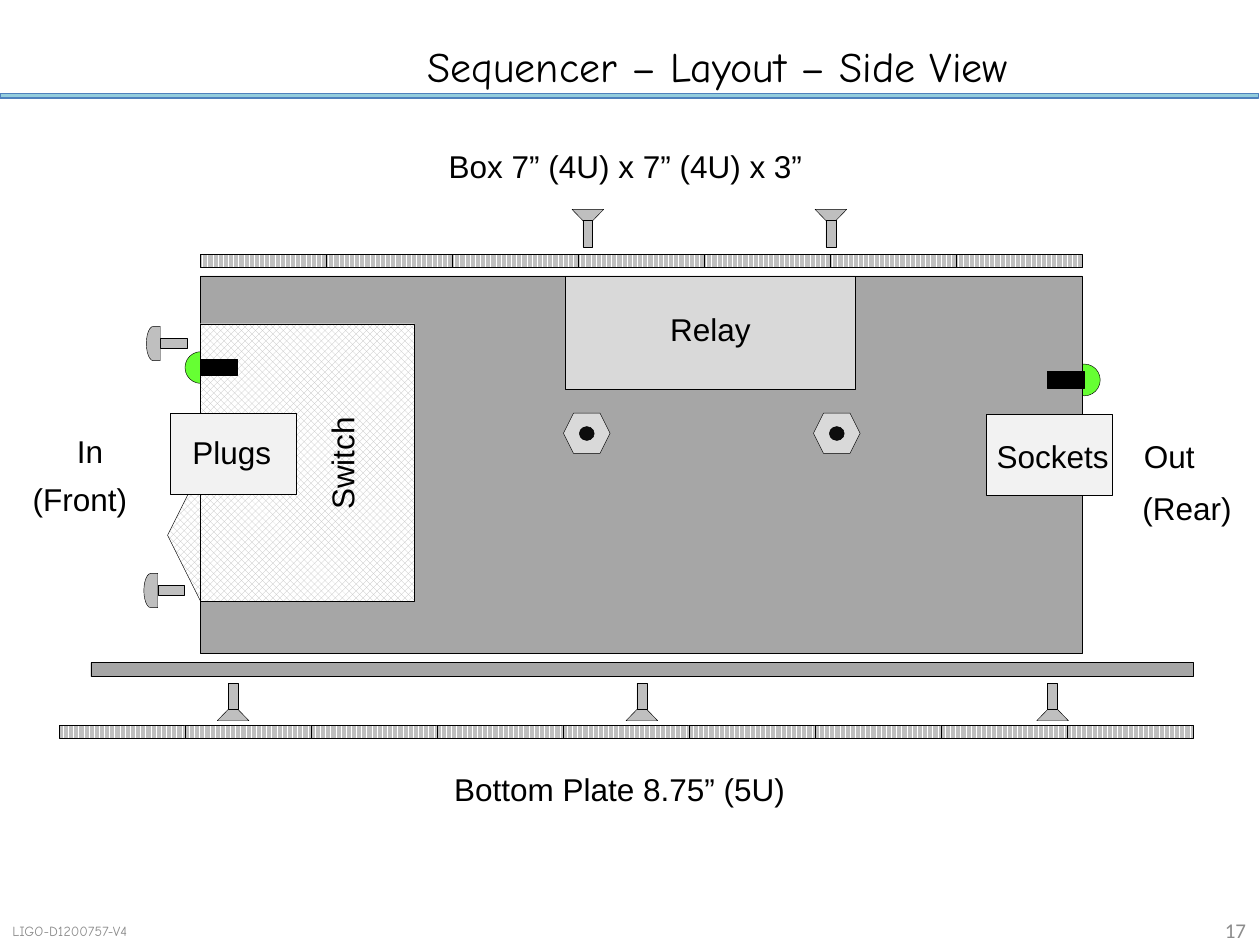
from dataclasses import dataclass

from pptx import Presentation
from pptx.dml.color import RGBColor
from pptx.enum.dml import MSO_PATTERN as Pattern
from pptx.enum.shapes import MSO_SHAPE as Shape
from pptx.enum.text import MSO_ANCHOR as Anchor, MSO_AUTO_SIZE as AutoSize, PP_ALIGN as Align
from pptx.util import Cm, Pt


@dataclass(frozen=True)
class Theme:
    black: str = "000000"
    white: str = "FFFFFF"
    footer: str = "8C8C8C"
    band: str = "93CDDD"
    band_line: str = "4F81BD"
    case: str = "A6A6A6"
    metal: str = "BFBFBF"
    relay: str = "D9D9D9"
    connector: str = "F2F2F2"
    hole: str = "0D0D0D"
    led: str = "66FF33"
    label_font: str = "Arial"
    title_font: str = "Comic Neue"
    number_font: str = "Calibri"
    title_size: int = 24
    label_size: int = 18
    number_size: int = 12
    footer_size: int = 8


T = Theme()
UNIT = 2.54  # one ruler tile
SHANK, SHANK_LENGTH = 0.2, 0.53


def rgb(color):
    return RGBColor.from_string(color)


def write(tf, text, font=T.label_font, size=T.label_size, color=T.black,
          align=Align.LEFT, anchor=Anchor.TOP, wrap=True, fit=AutoSize.NONE):
    tf.word_wrap = wrap
    tf.auto_size = fit
    tf.vertical_anchor = anchor
    p = tf.paragraphs[0]
    p.alignment = align
    r = p.add_run()
    r.text = text
    r.font.name, r.font.size = font, Pt(size)
    r.font.color.rgb = rgb(color)


def add_text(s, text, x, y, w, h=1.02, rotation=0, **fmt):
    sp = s.shapes.add_textbox(Cm(x), Cm(y), Cm(w), Cm(h))
    sp.rotation = rotation
    write(sp.text_frame, text, **fmt)


def add_label(s, text, x, y, w, **fmt):
    add_text(s, text, x, y, w, fit=AutoSize.SHAPE_TO_FIT_TEXT, **fmt)


def add_part(s, kind, x, y, w, h, fill, pattern=None, rotation=0,
             line=T.black, line_width=0.25):
    """Add an outlined shape, solid or with a pattern on white."""
    sp = s.shapes.add_shape(kind, Cm(x), Cm(y), Cm(w), Cm(h))
    sp.shadow.inherit = False
    sp.rotation = rotation
    if pattern is None:
        sp.fill.solid()
        sp.fill.fore_color.rgb = rgb(fill)
    else:
        sp.fill.patterned()
        sp.fill.pattern = pattern
        sp.fill.fore_color.rgb = rgb(fill)
        sp.fill.back_color.rgb = rgb(T.white)
    sp.line.color.rgb = rgb(line)
    sp.line.width = Pt(line_width)
    return sp


def add_ruler(s, x, y, count):
    for i in range(count):
        add_part(s, Shape.RECTANGLE, x + i * UNIT, y, UNIT, 0.26, T.metal,
                 pattern=Pattern.DARK_VERTICAL)


def add_flat_screw(s, cx, head_y, shank_y, rotation=0):
    add_part(s, Shape.ISOSCELES_TRIANGLE, cx - 0.32, head_y, 0.64, 0.33, T.metal,
             rotation=rotation)
    add_part(s, Shape.RECTANGLE, cx - SHANK / 2, shank_y, SHANK, SHANK_LENGTH, T.metal)


def add_round_screw(s, x, y):
    shank = add_part(s, Shape.RECTANGLE, x + 0.29, y + 0.24, SHANK_LENGTH, SHANK, T.metal)
    head = add_part(s, Shape.FLOWCHART_DELAY, x, y, 0.28, 0.69, T.metal, rotation=180)
    s.shapes.add_group_shape([shank, head])


def add_nut(s, cx, cy):
    add_part(s, Shape.HEXAGON, cx - 0.47, cy - 0.41, 0.94, 0.81, T.relay)
    add_part(s, Shape.OVAL, cx - 0.15, cy - 0.14, 0.3, 0.28, T.hole)


def add_frame(s):
    """Add the title, the band below it and the footer."""
    add_part(s, Shape.RECTANGLE, 0, 1.88, 25.37, 0.1, T.band,
             line=T.band_line, line_width=0.75)
    add_text(s, "LIGO-D1200757-V4", 0, 18.52, 3.53, 0.51, font=T.title_font,
             size=T.footer_size, color=T.footer, anchor=Anchor.MIDDLE)
    add_text(s, "17", 23.52, 18.47, 1.85, 0.56, font=T.number_font, size=T.number_size,
             color=T.footer, align=Align.RIGHT, anchor=Anchor.MIDDLE)
    title = s.shapes.title
    title.left, title.top, title.width, title.height = Cm(4.8), Cm(0.76), Cm(19.33), Cm(1.12)
    write(title.text_frame, "Sequencer – Layout – Side View", font=T.title_font,
          size=T.title_size, align=Align.CENTER, anchor=Anchor.MIDDLE)


def add_bottom_plate(s):
    add_label(s, "Bottom Plate 8.75” (5U)", 8.59, 15.39, 7.8, align=Align.CENTER)
    add_ruler(s, 1.19, 14.62, 9)
    add_part(s, Shape.RECTANGLE, 1.83, 13.36, 22.23, 0.28, T.case)
    for cx in (4.7, 12.94, 21.22):
        add_flat_screw(s, cx, 14.2, 13.77)


def add_box(s):
    add_label(s, "Box 7” (4U) x 7” (4U) x 3”", 8.71, 2.84, 7.8, align=Align.CENTER)
    for x, y in ((21.54, 7.34), (3.73, 7.09)):
        add_part(s, Shape.OVAL, x, y, 0.64, 0.64, T.led)
    add_part(s, Shape.RECTANGLE, 4.04, 5.56, 7 * UNIT, 3 * UNIT, T.case)
    add_part(s, Shape.ISOSCELES_TRIANGLE, 2.39, 10.46, 2.64, 0.66, T.metal,
             pattern=Pattern.LARGE_CHECKER_BOARD, rotation=270)
    add_part(s, Shape.RECTANGLE, 3.4, 7.16, 5.59, 4.32, T.metal,
             pattern=Pattern.LARGE_CHECKER_BOARD, rotation=270)
    for x, y, w, h, fill in ((3.43, 8.33, UNIT, 1.63, T.connector),
                             (11.4, 5.56, 5.84, 2.29, T.relay),
                             (19.89, 8.36, UNIT, 1.63, T.connector),
                             (4.04, 7.24, 0.74, 0.33, T.black),
                             (21.11, 7.49, 0.74, 0.33, T.black)):
        add_part(s, Shape.RECTANGLE, x, y, w, h, fill)
    for cx in (11.85, 16.75):
        add_flat_screw(s, cx, 4.22, 4.45, rotation=180)
    add_ruler(s, 4.04, 5.13, 7)
    for cx in (11.83, 16.87):
        add_nut(s, cx, 8.74)
    for x, y in ((2.95, 6.58), (2.9, 11.56)):
        add_round_screw(s, x, y)


def add_part_labels(s):
    add_label(s, "Switch", 5.69, 8.81, 2.41, rotation=270, wrap=False)
    for text, x, y, w in (("Relay", 13.26, 6.12, 2.16), ("Plugs", 3.63, 8.61, 2.11),
                          ("Sockets", 19.84, 8.69, 2.79), ("In", 1.3, 8.59, 1.04),
                          ("Out", 22.81, 8.69, 1.55)):
        add_label(s, text, x, y, w, wrap=False)
    add_label(s, "(Front)", 0.41, 9.55, 2.59)
    add_label(s, "(Rear)", 22.78, 9.73, 2.6)


def main():
    prs = Presentation()
    prs.slide_width, prs.slide_height = Cm(25.4), Cm(19.05)
    s = prs.slides.add_slide(prs.slide_layouts[5])
    add_frame(s)
    add_bottom_plate(s)
    add_box(s)
    add_part_labels(s)
    prs.save("out.pptx")


if __name__ == "__main__":
    main()
